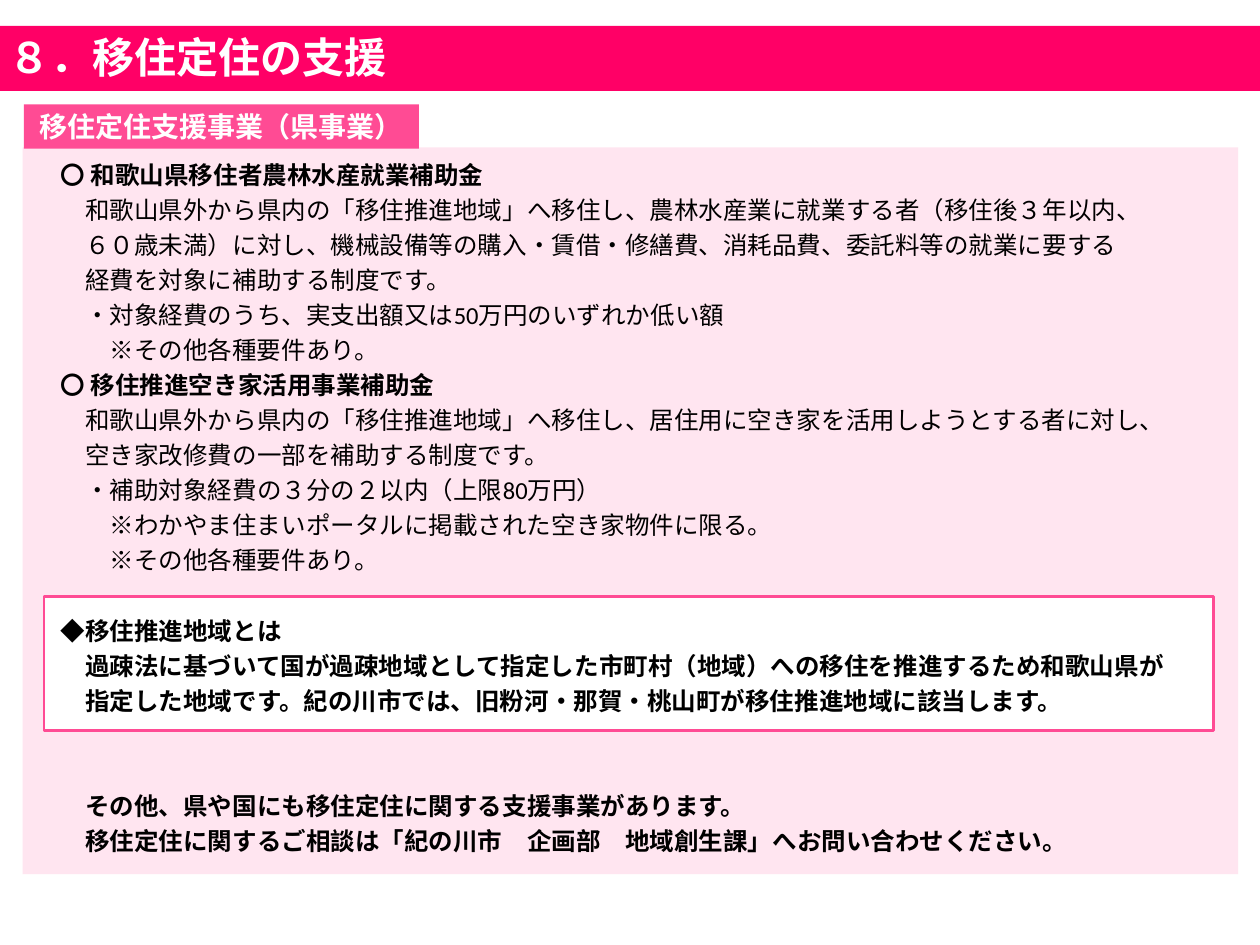
from lxml import etree
from pptx import Presentation
from pptx.dml.color import RGBColor
from pptx.enum.shapes import MSO_SHAPE
from pptx.enum.text import MSO_ANCHOR, PP_ALIGN
from pptx.oxml.ns import qn
from pptx.util import Pt

RECT = MSO_SHAPE.RECTANGLE
MIDDLE = MSO_ANCHOR.MIDDLE
TOP = MSO_ANCHOR.TOP
LEFT = PP_ALIGN.LEFT
CENTER = PP_ALIGN.CENTER

COLORS = {"head": "FF0066", "label": "FF4B94", "panel": "FFD1E4",
          "white": "FFFFFF", "text": "000000"}

LINES = [
    (1, True, 0, "〇 和歌山県移住者農林水産就業補助金"),
    (2, False, 0, "和歌山県外から県内の「移住推進地域」へ移住し、農林水産業に就業する者（移住後３年以内、"),
    (2, False, 0, "６０歳未満）に対し、機械設備等の購入・賃借・修繕費、消耗品費、委託料等の就業に要する"),
    (2, False, 0, "経費を対象に補助する制度です。"),
    (2, False, 0, "・対象経費のうち、実支出額又は50万円のいずれか低い額"),
    (3, False, 0, "※その他各種要件あり。"),
    (1, True, 0, "〇 移住推進空き家活用事業補助金"),
    (2, False, 0, "和歌山県外から県内の「移住推進地域」へ移住し、居住用に空き家を活用しようとする者に対し、"),
    (2, False, 0, "空き家改修費の一部を補助する制度です。"),
    (2, False, 0, "・補助対象経費の３分の２以内（上限80万円）"),
    (3, False, 0, "※わかやま住まいポータルに掲載された空き家物件に限る。"),
    (3, False, 0, "※その他各種要件あり。"),
    (1, True, 1, "◆移住推進地域とは"),
    (2, True, 0, "過疎法に基づいて国が過疎地域として指定した市町村（地域）への移住を推進するため和歌山県が"),
    (2, True, 0, "指定した地域です。紀の川市では、旧粉河・那賀・桃山町が移住推進地域に該当します。"),
    (2, True, 2, "その他、県や国にも移住定住に関する支援事業があります。"),
    (2, True, 0, "移住定住に関するご相談は「紀の川市　企画部　地域創生課」へお問い合わせください。"),
]


class Deck:
    """Draws styled elements on one slide, with lengths in points."""

    font = "Calibri"
    size = 14
    pitch = 20

    def __init__(self, slide):
        self.slide = slide

    def color(self, name):
        return RGBColor.from_string(COLORS[name])

    def box(self, x, y, w, h, fill, line=None, alpha=None):
        shape = self.slide.shapes.add_shape(RECT, Pt(x), Pt(y), Pt(w), Pt(h))
        shape.shadow.inherit = False
        shape.fill.solid()
        shape.fill.fore_color.rgb = self.color(fill)
        if alpha:
            tint = shape._element.spPr.find(".//" + qn("a:srgbClr"))
            etree.SubElement(tint, qn("a:alpha")).set("val", str(alpha * 1000))
        if line:
            shape.line.color.rgb = self.color(line)
            shape.line.width = Pt(1.5)
        else:
            shape.line.fill.background()
        return shape

    def area(self, x, y, w, h, anchor=TOP):
        frame = self.slide.shapes.add_textbox(Pt(x), Pt(y), Pt(w), Pt(h)).text_frame
        frame.word_wrap = True
        frame.vertical_anchor = anchor
        return frame

    def put(self, para, text, size, color, bold, align=LEFT):
        para.text = text
        para.alignment = align
        for run in para.runs:
            font = run.font
            font.size = Pt(size)
            font.bold = bold
            font.color.rgb = self.color(color)
            font.name = self.font
            latin = run._r.rPr.find(qn("a:latin"))
            east = etree.Element(qn("a:ea"), typeface=self.font)
            latin.addnext(east)

    def title(self, x, y, w, h, text):
        frame = self.area(x, y, w, h, MIDDLE)
        frame.margin_left = frame.margin_right = Pt(5)
        frame.margin_top = frame.margin_bottom = Pt(2.7)
        para = frame.paragraphs[0]
        self.put(para, text, 24, "white", True)
        para.line_spacing = 0.9

    def label(self, x, y, w, h, text):
        frame = self.box(x, y, w, h, "label").text_frame
        frame.vertical_anchor = MIDDLE
        self.put(frame.paragraphs[0], text, 16, "white", True, CENTER)

    def body(self, x, y, w, h, lines):
        frame = self.area(x, y, w, h)
        for i, (level, bold, gap, text) in enumerate(lines):
            para = frame.add_paragraph() if i else frame.paragraphs[0]
            self.put(para, text, self.size, "text", bold)
            para.line_spacing = Pt(self.pitch)
            para.space_before = Pt(gap * self.pitch)
            para._p.get_or_add_pPr().set("marL", str(Pt(level * self.size)))


def main():
    show = Presentation()
    show.slide_width, show.slide_height = Pt(720), Pt(540)
    deck = Deck(show.slides.add_slide(show.slide_layouts[6]))
    deck.box(13, 84.2, 694.5, 415.3, "panel", alpha=55)
    deck.box(0, 14.8, 720, 37.2, "head")
    deck.title(0, 15.1, 337.7, 38.2, "８．移住定住の支援")
    deck.label(13.6, 59.6, 225.8, 25.4, "移住定住支援事業（県事業）")
    deck.box(25.2, 340.7, 668.4, 76.9, "white", line="label")
    deck.body(13.6, 84.8, 684.7, 414, LINES)
    show.save("out.pptx")


if __name__ == "__main__":
    main()
